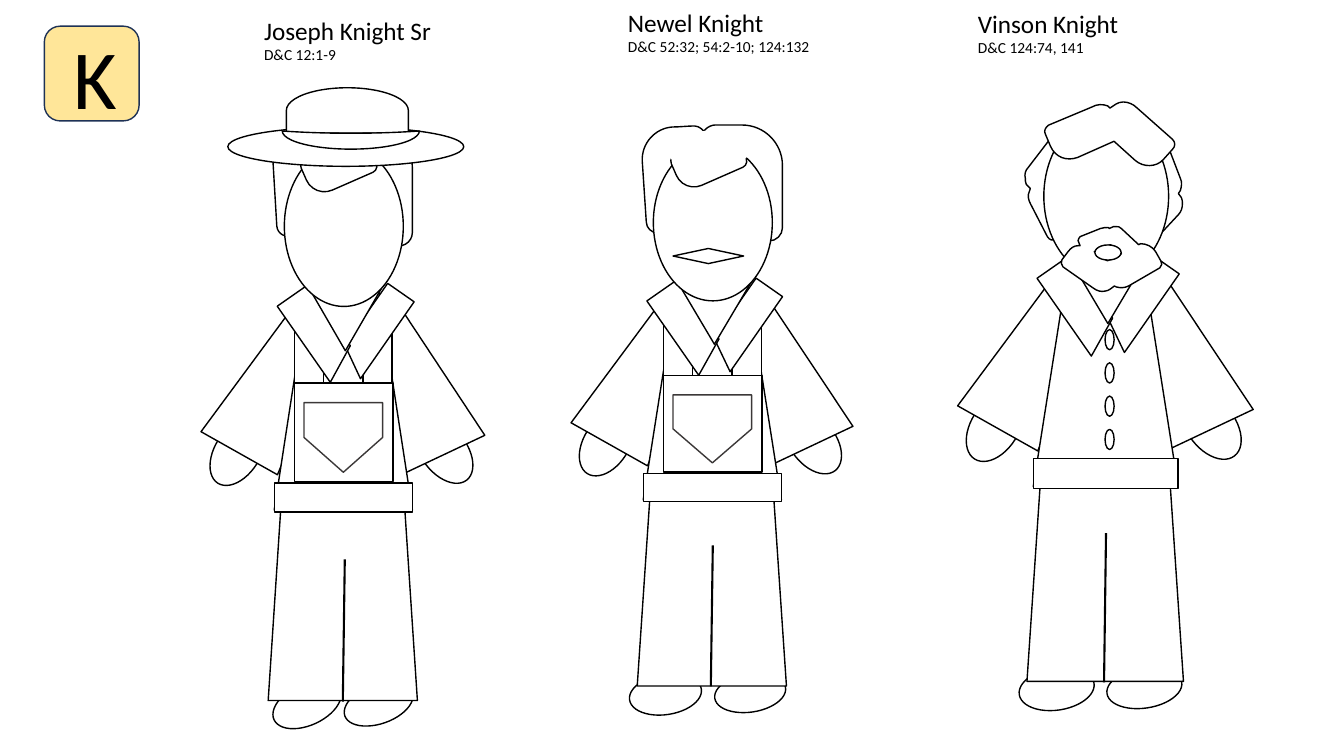
from collections import namedtuple
from math import cos, radians, sin

from lxml.etree import SubElement
from pptx import Presentation
from pptx.dml.color import RGBColor
from pptx.enum.shapes import MSO_CONNECTOR, MSO_SHAPE
from pptx.enum.text import MSO_AUTO_SIZE, PP_ALIGN
from pptx.oxml.ns import qn
from pptx.util import Inches, Pt

OVAL, RECTANGLE, TRAPEZOID = MSO_SHAPE.OVAL, MSO_SHAPE.RECTANGLE, MSO_SHAPE.TRAPEZOID
LAPEL, LOCK = MSO_SHAPE.FLOWCHART_MANUAL_INPUT, MSO_SHAPE.ROUND_2_DIAG_RECTANGLE
BLACK, WHITE, LOCK_CORNERS = "000000", "FFFFFF", (0.167, 0.5)
UNSCALED = (1, 0, 1, 0)

# box: left, top, width, height
Part = namedtuple("Part", "kind box turn flip corners line fill",
                  defaults=(0, "", (), BLACK, WHITE))
# Each contour: start point, then lines (x, y) or curves (six numbers)
Outline = namedtuple("Outline", "center turn contours")

# Clothing shared by the figures, in the first figure's coordinates
SLEEVES_AND_SHIRT = [
    Part(OVAL, (4.18, 4.11, 0.45, 0.73), 322.3),
    Part(OVAL, (2.13, 4.12, 0.45, 0.73), 32.2),
    Part(TRAPEZOID, (2.37, 2.85, 0.87, 1.76), 29.4),
    Part(TRAPEZOID, (3.51, 2.9, 0.98, 1.71), 334.7),
    Part(TRAPEZOID, (2.72, 2.83, 1.37, 2.23))]
TROUSERS = [Part(TRAPEZOID, (2.66, 4.88, 1.48, 2.07), corners=(0.092,))]
STRAPS = [Part(RECTANGLE, (left, 3.12, 0.29, 1.18)) for left in (2.92, 3.6)]
BELT_AND_COLLAR = [
    Part(RECTANGLE, (3.26, 4.25, 0.29, 1.37), 90),
    Part(LAPEL, (3.55, 2.82, 0.32, 0.93), 34.9, "V"),
    Part(LAPEL, (2.98, 2.85, 0.37, 0.92), 325.1, "HV")]
BIB = [Part(RECTANGLE, (2.92, 3.8, 0.98, 0.98)),
       Part(MSO_SHAPE.PENTAGON, (3.06, 3.95, 0.69, 0.78), 90, line="3B3838")]
NECK_AND_FACE = [Part(MSO_SHAPE.ISOSCELES_TRIANGLE, (3.02, 2.78, 0.81, 0.7), 180),
                 Part(OVAL, (2.82, 1.45, 1.18, 1.59))]

# Hair and beard outlines
NEWEL_HAIR = Outline((7.07, 1.82), 0, [[
    (7.09, 1.24), (7.36, 1.24), (7.58, 1.24, 7.76, 1.42, 7.76, 1.64), (7.76, 2.26),
    (7.76, 2.33, 7.7, 2.39, 7.63, 2.39), (7.36, 2.39), (7.19, 2.39, 7.05, 2.29, 6.99, 2.15),
    (6.99, 2.14), (6.95, 2.19), (6.9, 2.25, 6.82, 2.29, 6.73, 2.29), (6.52, 2.31),
    (6.46, 2.31, 6.41, 2.26, 6.41, 2.2), (6.37, 1.6), (6.36, 1.42, 6.5, 1.27, 6.67, 1.26),
    (6.74, 1.26, 6.81, 1.25, 6.89, 1.25), (6.91, 1.25, 6.94, 1.26, 6.96, 1.28), (6.98, 1.3),
    (7, 1.28), (7.02, 1.26, 7.06, 1.24, 7.09, 1.24)]])
VINSON_LEFT_HAIR = Outline((10.47, 1.88), 308.5, [[
    (10.16, 1.77), (10.15, 1.73, 10.16, 1.69, 10.19, 1.66), (10.42, 1.36),
    (10.44, 1.34, 10.47, 1.34, 10.5, 1.35), (10.58, 1.42), (10.65, 1.48, 10.66, 1.58, 10.61, 1.65),
    (10.47, 1.83), (10.62, 2.11), (10.66, 2.19, 10.63, 2.29, 10.55, 2.33), (10.46, 2.38),
    (10.43, 2.39, 10.4, 2.38, 10.38, 2.35), (10.21, 2.02), (10.19, 1.98, 10.18, 1.94, 10.2, 1.9),
    (10.21, 1.87), (10.17, 1.83), (10.16, 1.81, 10.16, 1.79, 10.16, 1.77)]])
VINSON_RIGHT_HAIR = Outline((11.44, 1.92), 132.9, [[
    (11.74, 2.04), (11.74, 2.08, 11.73, 2.12, 11.7, 2.15), (11.43, 2.44),
    (11.41, 2.46, 11.38, 2.46, 11.35, 2.44), (11.28, 2.37), (11.22, 2.32, 11.22, 2.21, 11.28, 2.15),
    (11.44, 1.97), (11.33, 1.68), (11.29, 1.6, 11.33, 1.51, 11.42, 1.47), (11.52, 1.42),
    (11.54, 1.41, 11.57, 1.42, 11.59, 1.45), (11.72, 1.79), (11.74, 1.83, 11.73, 1.87, 11.72, 1.91),
    (11.7, 1.94), (11.73, 1.98), (11.74, 2, 11.74, 2.02, 11.74, 2.04)]])
VINSON_TOP_HAIR = Outline((11, 1.4), 42.5, [[
    (11.15, 1.01), (11.2, 1.01, 11.25, 1.03, 11.29, 1.07), (11.64, 1.38),
    (11.67, 1.41, 11.67, 1.45, 11.64, 1.48), (11.55, 1.58), (11.48, 1.66, 11.35, 1.66, 11.27, 1.59),
    (11.06, 1.4), (10.7, 1.56), (10.59, 1.6, 10.48, 1.56, 10.43, 1.45), (10.38, 1.33),
    (10.36, 1.3, 10.38, 1.26, 10.41, 1.24), (10.84, 1.06), (10.89, 1.03, 10.95, 1.03, 11, 1.05),
    (11.02, 1.07), (11.08, 1.03), (11.1, 1.02, 11.12, 1.01, 11.15, 1.01)]])
VINSON_BEARD = Outline((11.02, 2.59), 43.2, [
    [(11.01, 2.43), (10.85, 2.5), (10.98, 2.59), (11.12, 2.52), (11.11, 2.52)],
    [(11.06, 2.25), (11.08, 2.25, 11.11, 2.25, 11.12, 2.27), (11.28, 2.42), (11.29, 2.43),
     (11.31, 2.42), (11.37, 2.42, 11.43, 2.45, 11.46, 2.5), (11.51, 2.59),
     (11.53, 2.61, 11.52, 2.64, 11.5, 2.66), (11.19, 2.84), (11.15, 2.86, 11.11, 2.86, 11.07, 2.85),
     (11.05, 2.84), (11.01, 2.87), (10.99, 2.88, 10.98, 2.89, 10.96, 2.89),
     (10.92, 2.9, 10.88, 2.89, 10.84, 2.86), (10.54, 2.65), (10.52, 2.63, 10.52, 2.6, 10.53, 2.58),
     (10.59, 2.5), (10.62, 2.46, 10.65, 2.44, 10.69, 2.44), (10.71, 2.44), (10.69, 2.39),
     (10.69, 2.38, 10.7, 2.36, 10.71, 2.35), (10.91, 2.27), (10.94, 2.26, 10.96, 2.26, 10.99, 2.26),
     (11, 2.27), (11.02, 2.26), (11.03, 2.25, 11.05, 2.25, 11.06, 2.25)]])

# fit: horizontal scale and shift, vertical scale and shift of the shared clothing
FIGURES = [
    dict(name="Joseph Knight Sr", verses="D&C 12:1-9", label=(2.52, 0.1),
         fit=UNSCALED, overalls=True, seam=(3.42, 5.55, 3.4, 6.96),
         shoes=[Part(OVAL, (3.56, 6.63, 0.39, 0.71), 70.7),
                Part(OVAL, (2.84, 6.63, 0.41, 0.72), 65.4)],
         hair=[Part(LOCK, (2.51, 1.48, 1.06, 0.64), 266.6, corners=LOCK_CORNERS),
               Part(LOCK, (3.29, 1.26, 0.8, 1.18), corners=LOCK_CORNERS)],
         front=[Part(LOCK, (3.01, 1.45, 0.7, 0.39), 336.4, corners=LOCK_CORNERS),
                Part(OVAL, (3.01, 1.26, 0.88, 0.39), line=""),
                Part(OVAL, (2.26, 1.26, 2.34, 0.39)),
                Part(MSO_SHAPE.FLOWCHART_DELAY, (3.22, 0.49, 0.45, 1.21), 270),
                Part(MSO_SHAPE.MOON, (3.39, 0.71, 0.18, 1.36), 90, "HV", (0.875,))]),
    dict(name="Newel Knight", verses="D&C 52:32; 54:2-10; 124:132", label=(6.13, 0.02),
         fit=(1, 3.66, 0.977, 0.015), overalls=True, seam=(7.07, 5.41, 7.05, 6.81),
         shoes=[Part(OVAL, (7.25, 6.52, 0.38, 0.71), 81.4),
                Part(OVAL, (6.4, 6.53, 0.4, 0.72), 81.4)],
         hair=[NEWEL_HAIR],
         front=[Part(LOCK, (6.68, 1.41, 0.7, 0.38), 336.4, corners=LOCK_CORNERS),
                Part(MSO_SHAPE.DIAMOND, (6.95, 2.19, 0.15, 0.7), 90),
                Part(OVAL, (6.84, 1.09, 0.4, 0.81), 85.9, line="")]),
    dict(name="Vinson Knight", verses="D&C 124:74, 141", label=(9.6, 0.03),
         fit=(1.049, 7.395, 1.023, -0.35), overalls=False, seam=(10.97, 5.29, 10.95, 6.77),
         shoes=[Part(OVAL, (11.15, 6.45, 0.4, 0.75), 81.4),
                Part(OVAL, (10.27, 6.46, 0.42, 0.75), 81.4)],
         hair=[VINSON_LEFT_HAIR, VINSON_RIGHT_HAIR],
         front=[*(Part(OVAL, (10.96, 3.27 + 0.33 * row, 0.09, 0.2)) for row in range(4)),
                VINSON_TOP_HAIR, VINSON_BEARD, Part(OVAL, (10.86, 2.43, 0.26, 0.15))])]


def color(hex_text):
    return RGBColor.from_string(hex_text)


def paint(shape, fill=WHITE, line=BLACK):
    shape.shadow.inherit = False
    shape.fill.solid()
    shape.fill.fore_color.rgb = color(fill)
    if line:
        shape.line.color.rgb = color(line)
        shape.line.width = Pt(1)
    else:
        shape.line.fill.background()


def draw_part(shapes, part, fit=UNSCALED):
    left, top, width, height = part.box
    scale_x, shift_x, scale_y, shift_y = fit
    center_x = (left + width / 2) * scale_x + shift_x
    center_y = (top + height / 2) * scale_y + shift_y
    if 45 <= part.turn % 180 < 135:  # a sideways part swaps its two scales
        scale_x, scale_y = scale_y, scale_x
    width, height = width * scale_x, height * scale_y
    shape = shapes.add_shape(part.kind, Inches(center_x - width / 2),
                             Inches(center_y - height / 2), Inches(width), Inches(height))
    shape.rotation = part.turn
    for direction in part.flip:
        shape.element.spPr.find(qn("a:xfrm")).set("flip" + direction, "1")
    for index, value in enumerate(part.corners):
        shape.adjustments[index] = value
    paint(shape, part.fill, part.line)


def upright(segment, center, turn):
    """Points of a segment in the frame before it is turned."""
    cosine, sine = cos(radians(turn)), sin(radians(turn))
    offsets = [(x - center[0], y - center[1]) for x, y in zip(segment[::2], segment[1::2])]
    return [(Inches(center[0] + x * cosine + y * sine), Inches(center[1] - x * sine + y * cosine))
            for x, y in offsets]


def draw_outline(shapes, outline):
    contours = [[upright(segment, outline.center, outline.turn) for segment in contour]
                for contour in outline.contours]
    builder = shapes.build_freeform(*contours[0][0][0])
    for contour in contours:
        if contour is not contours[0]:
            builder.move_to(*contour[0][0])
        builder.add_line_segments([points[-1] for points in contour[1:]], close=True)
    shape = builder.convert_to_shape()
    # Bend the segments that have control points
    segments = [points for contour in contours for points in contour[1:]]
    for element, points in zip(list(shape.element.spPr.iter(qn("a:lnTo"))), segments):
        if len(points) == 3:
            element.tag = qn("a:cubicBezTo")
            element.remove(element[0])
            for x, y in points:
                SubElement(element, qn("a:pt"), x=str(x - shape.left), y=str(y - shape.top))
    shape.rotation = outline.turn
    paint(shape)


def add_text(shapes, box, lines, align=PP_ALIGN.LEFT):
    frame = shapes.add_textbox(*map(Inches, box)).text_frame
    frame.word_wrap = True
    frame.auto_size = MSO_AUTO_SIZE.SHAPE_TO_FIT_TEXT
    for index, (text, size) in enumerate(lines):
        paragraph = frame.add_paragraph() if index else frame.paragraphs[0]
        paragraph.alignment = align
        run = paragraph.add_run()
        run.text = text
        run.font.name, run.font.size = "Calibri", Pt(size)
        run.font.color.rgb = color(BLACK)


def draw_figure(shapes, overalls, fit, shoes, hair, front, seam):
    # Back to front: shared clothing is fitted, the figure's own parts are not
    for parts, placement in [
            (SLEEVES_AND_SHIRT, fit), (shoes, UNSCALED), (TROUSERS, fit), (hair, UNSCALED),
            (STRAPS * overalls, fit), (BELT_AND_COLLAR, fit), (BIB * overalls, fit),
            (NECK_AND_FACE, fit), (front, UNSCALED)]:
        for part in parts:
            if isinstance(part, Outline):
                draw_outline(shapes, part)
            else:
                draw_part(shapes, part, placement)
    line = shapes.add_connector(MSO_CONNECTOR.STRAIGHT, *map(Inches, seam))
    line.line.color.rgb = color(BLACK)
    line.line.width = Pt(1.5)
    SubElement(line.element.spPr, qn("a:effectLst"))


presentation = Presentation()
presentation.slide_width, presentation.slide_height = Inches(13.33), Inches(7.5)
slide = presentation.slides.add_slide(presentation.slide_layouts[6])
# Letter badge
badge = slide.shapes.add_group_shape().shapes
draw_part(badge, Part(MSO_SHAPE.ROUNDED_RECTANGLE, (0.44, 0.26, 0.94, 0.94),
                      line="1E3256", fill="FFE699"))
add_text(badge, (0.63, 0.2, 0.51, 0.92), [("K", 60)], PP_ALIGN.CENTER)
# Names, verses and figures
for figure in FIGURES:
    name, verses, label = (figure.pop(key) for key in ("name", "verses", "label"))
    add_text(slide.shapes, (*label, 2.75, 0.59), [(name, 18), (verses, 11)])
    draw_figure(slide.shapes.add_group_shape().shapes, **figure)
presentation.save("out.pptx")
